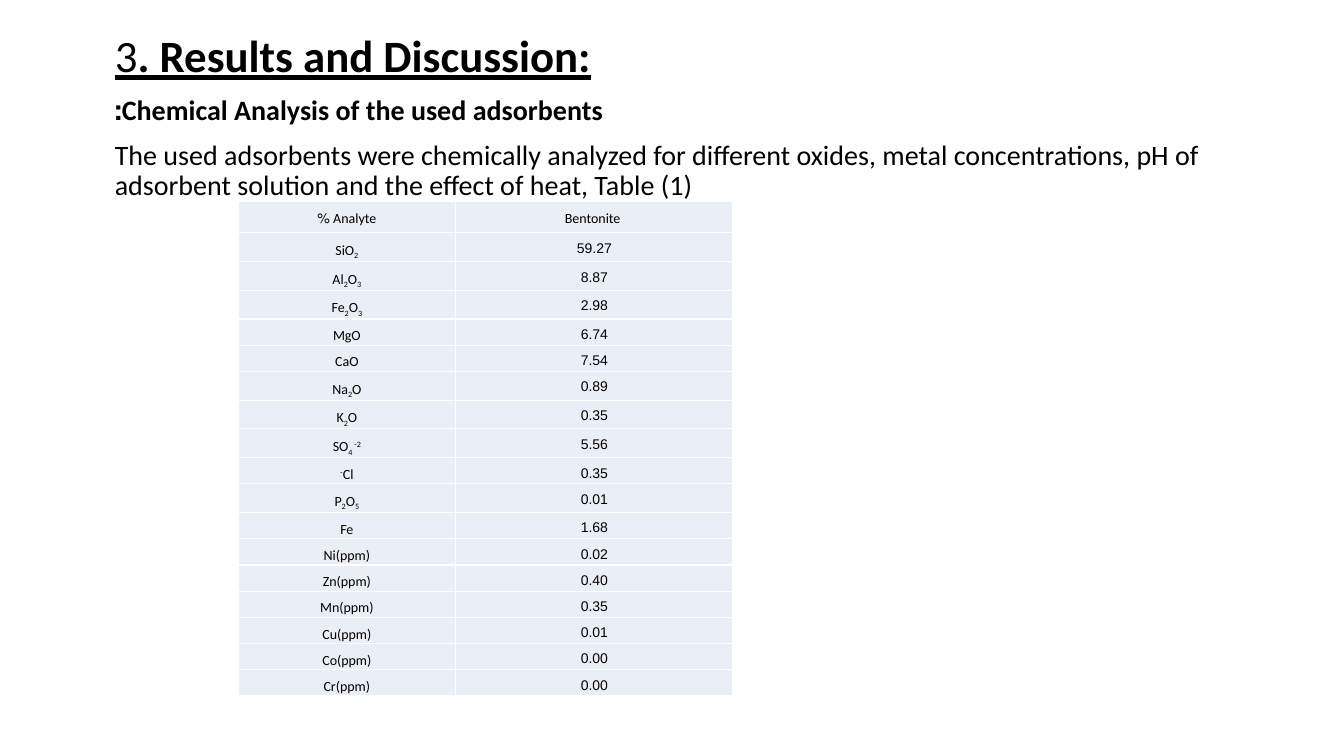
"""Build the slide on the chemical analysis of the adsorbents."""
from dataclasses import dataclass

from lxml import etree
from pptx import Presentation
from pptx import util as u
from pptx.dml.color import RGBColor
from pptx.enum import text
from pptx.oxml import parse_xml
from pptx.oxml.ns import nsdecls, qn

PX = 9144
BLACK = RGBColor(0x00, 0x00, 0x00)
PALE = RGBColor(0xEA, 0xEF, 0xF7)
WHITE = RGBColor(0xFF, 0xFF, 0xFF)
FACE = "Calibri"
SHIFTS = {"_": "-25000", "^": "30000"}
LEFT, TOP, HEAD, ROW = 236, 200, 31, 26
WIDTHS = (216, 275)


@dataclass
class Line:
    words: str
    size: int = 20
    bold: bool = False
    rtl: bool = True


@dataclass
class Oxide:
    label: str
    value: str


LINES = (
    Line("Chemical Analysis of the used adsorbents:", bold=True),
    Line("The used adsorbents were chemically analyzed for different oxides, "
         "metal concentrations, pH of adsorbent solution and the effect of "
         "heat, Table (1)"),
)
ROWS = (
    Oxide("Analyte %", " Bentonite"),
    Oxide("SiO|_2", "59.27"),
    Oxide("Al|_2|O|_3", "8.87"),
    Oxide("Fe|_2|O|_3", "2.98"),
    Oxide("MgO", "6.74"),
    Oxide("CaO", "7.54"),
    Oxide("Na|_2|O", "0.89"),
    Oxide("K|_2|O", "0.35"),
    Oxide("SO|_4 |^-2", "5.56"),
    Oxide("Cl|^-", "0.35"),
    Oxide("P|_2|O|_5", "0.01"),
    Oxide("Fe", "1.68"),
    Oxide("Ni(ppm)", "0.02"),
    Oxide("Zn(ppm)", "0.40"),
    Oxide("Mn(ppm)", "0.35"),
    Oxide("Cu(ppm)", "0.01"),
    Oxide("Co(ppm)", "0.00"),
    Oxide("Cr(ppm)", "0.00"),
)


def style(par, size: int, bold: bool, rtl: bool) -> None:
    """Set the font and reading order of a paragraph."""
    font = par.font
    font.name, font.size, font.bold = FACE, u.Pt(size), bold
    font.color.rgb = BLACK
    if rtl:
        par._p.get_or_add_pPr().set("rtl", "1")


def add_body(slide) -> None:
    """Add the heading and the text lines."""
    box = slide.shapes.add_textbox(104 * PX, 29 * PX, 1138 * PX, 671 * PX)
    frame = box.text_frame
    frame.word_wrap = True
    title = Line("3", 32, rtl=False)
    for i, line in enumerate((title, *LINES)):
        par = frame.paragraphs[0] if i == 0 else frame.add_paragraph()
        par.alignment = text.PP_ALIGN.LEFT
        par.line_spacing, par.space_before = 0.9, u.Pt(10)
        style(par, line.size, line.bold, line.rtl)
        par.add_run().text = line.words
    head = frame.paragraphs[0]
    head.font.underline = True
    head.add_run().text = ". Results and Discussion:"
    head.runs[1].font.bold = True


def add_edges(cell) -> None:
    """Give a cell thin white borders."""
    props = cell._tc.get_or_add_tcPr()
    for i, side in enumerate(("lnL", "lnR", "lnT", "lnB")):
        props.insert(i, parse_xml(
            f'<a:{side} {nsdecls("a")} w="12700"><a:solidFill>'
            f'<a:srgbClr val="{WHITE}"/></a:solidFill></a:{side}>'))


def fill_cell(cell, words: str) -> None:
    """Write the runs of a cell, with lowered and raised bits."""
    cell.fill.solid()
    cell.fill.fore_color.rgb = PALE
    cell.margin_left = cell.margin_right = 7 * PX
    cell.margin_top = cell.margin_bottom = 0
    par = cell.text_frame.paragraphs[0]
    par.alignment, par.line_spacing = text.PP_ALIGN.CENTER, 1.5
    style(par, 10, False, True)
    for bit in words.split("|"):
        run = par.add_run()
        run.text = bit.lstrip("_^")
        props = run._r.get_or_add_rPr()
        if bit[0] in SHIFTS:
            props.set("baseline", SHIFTS[bit[0]])
        if bit[0].isdigit():
            etree.SubElement(props, qn("a:cs")).set("typeface", "Arial")
    add_edges(cell)


def add_grid(slide) -> None:
    """Add the table of analytes."""
    high = HEAD + ROW * (len(ROWS) - 1)
    grid = slide.shapes.add_table(
        len(ROWS), len(WIDTHS), LEFT * PX, TOP * PX,
        sum(WIDTHS) * PX, high * PX).table
    grid.first_row = grid.horz_banding = False
    for col, wide in zip(grid.columns, WIDTHS):
        col.width = wide * PX
    for i, row in enumerate(ROWS):
        grid.rows[i].height = (ROW if i else HEAD) * PX
        fill_cell(grid.cell(i, 0), row.label)
        fill_cell(grid.cell(i, 1), row.value)


def main() -> None:
    """Build and save the slide."""
    deck = Presentation()
    deck.slide_width, deck.slide_height = 1333 * PX, 750 * PX
    slide = deck.slides.add_slide(deck.slide_layouts[6])
    add_body(slide)
    add_grid(slide)
    deck.save("out.pptx")


if __name__ == "__main__":
    main()
